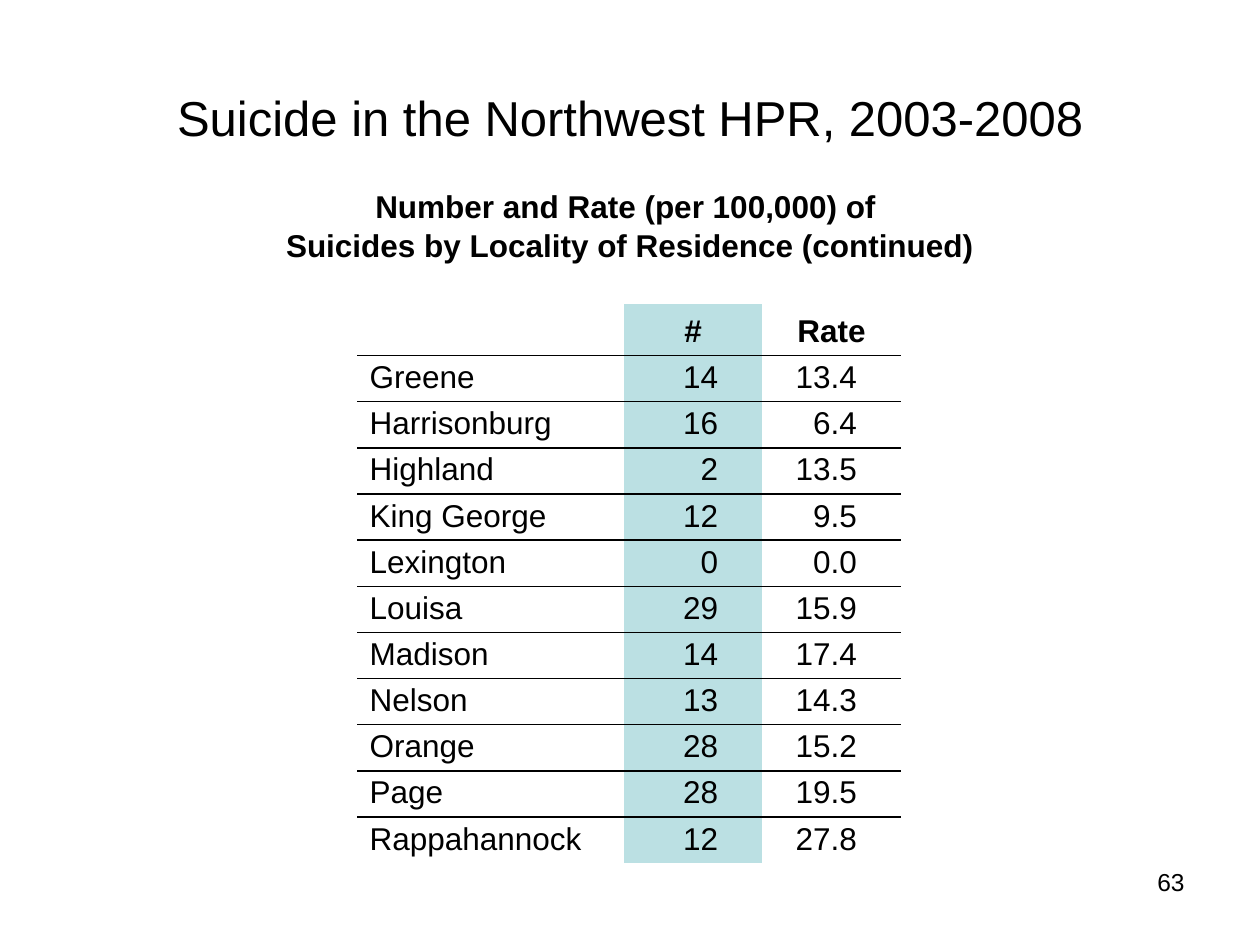
from pptx import Presentation
from pptx import util as u
from pptx.dml.color import RGBColor
from pptx.enum import text as t
from pptx.oxml import parse_xml
from pptx.oxml.ns import nsdecls

BLACK = RGBColor(0x00, 0x00, 0x00)
TEAL = RGBColor(0xBB, 0xE0, 0xE3)
FONT = "Arial"
PLAIN = "{2D5ABB26-0587-4C30-8999-92F81FD0307C}"  # table style without lines
LEFT, MID, RIGHT = t.PP_ALIGN.LEFT, t.PP_ALIGN.CENTER, t.PP_ALIGN.RIGHT

HEAD = ("", "#", "Rate")
RATES = [
    ("Greene", "14", "13.4"),
    ("Harrisonburg", "16", "6.4"),
    ("Highland", "2", "13.5"),
    ("King George", "12", "9.5"),
    ("Lexington", "0", "0.0"),
    ("Louisa", "29", "15.9"),
    ("Madison", "14", "17.4"),
    ("Nelson", "13", "14.3"),
    ("Orange", "28", "15.2"),
    ("Page", "28", "19.5"),
    ("Rappahannock", "12", "27.8"),
]


def write(frame, words, size=18, bold=False, align=LEFT, line=None):
    """Fill a text frame, one paragraph for each line of words."""
    frame.text = words
    for para in frame.paragraphs:
        para.alignment = align
        para.line_spacing = line
        for run in para.runs:
            font = run.font
            font.name, font.size, font.bold = FONT, u.Pt(size), bold
            font.color.rgb = BLACK


class Page:
    """One slide on a grid of 120 columns by 90 rows."""

    def __init__(self, deck):
        self.cell = deck.slide_width // 120
        self.slide = deck.slides.add_slide(deck.slide_layouts[1])

    def span(self, *units):
        return [u.Emu(round(n * self.cell)) for n in units]

    def place(self, shape, box):
        shape.left, shape.top, shape.width, shape.height = self.span(*box)

    def title(self, words, box):
        shape = self.slide.shapes.title
        self.place(shape, box)
        shape.text_frame.vertical_anchor = t.MSO_ANCHOR.MIDDLE
        write(shape.text_frame, words, size=28, align=MID)

    def body(self, words, box):
        shape = self.slide.placeholders[1]
        self.place(shape, box)
        write(shape.text_frame, words, bold=True, align=MID, line=1.05)
        for para in shape.text_frame.paragraphs:
            para.space_before = u.Pt(0)
            props = para._p.get_or_add_pPr()
            props.set("marL", str(u.Inches(0.38)))
            props.set("indent", str(u.Inches(-0.38)))
            props.append(parse_xml(f"<a:buNone {nsdecls('a')}/>"))

    def note(self, words, box, **style):
        frame = self.slide.shapes.add_textbox(*self.span(*box)).text_frame
        frame.word_wrap = True
        write(frame, words, **style)

    def rule(self, cell):
        """Draw a thin line under a table cell."""
        cell._tc.get_or_add_tcPr().insert(0, parse_xml(
            f'<a:lnB {nsdecls("a")} w="{u.Pt(1)}"><a:solidFill>'
            f'<a:srgbClr val="{BLACK}"/></a:solidFill></a:lnB>'))

    def table(self, rows, left, top, wide, high):
        box = self.span(left, top, sum(wide), sum(high))
        frame = self.slide.shapes.add_table(len(rows), len(wide), *box)
        frame._element.xpath(".//a:tableStyleId")[0].text = PLAIN
        grid = frame.table
        grid.first_row = grid.horz_banding = False
        for col, width in zip(grid.columns, self.span(*wide)):
            col.width = width
        for row, height in zip(grid.rows, self.span(*high)):
            row.height = height
        for r, row in enumerate(rows):
            for c, words in enumerate(row):
                cell = grid.cell(r, c)
                cell.vertical_anchor = t.MSO_ANCHOR.BOTTOM
                if c == 1:
                    cell.fill.solid()
                    cell.fill.fore_color.rgb = TEAL
                else:
                    cell.fill.background()
                if r and c:
                    cell.margin_right = u.Inches(0.35)
                align = MID if r == 0 else RIGHT if c else LEFT
                write(cell.text_frame, words, bold=r == 0, align=align,
                      line=0.95 if words else None)
                if r < len(rows) - 1:
                    self.rule(cell)


def main():
    deck = Presentation()
    deck.slide_width, deck.slide_height = u.Inches(10), u.Inches(7.5)
    page = Page(deck)

    # Headings
    page.title("Suicide in the Northwest HPR, 2003-2008", (6, 3.6, 108, 15))
    page.body("Number and Rate (per 100,000) of \n"
              "Suicides by Locality of Residence (continued)",
              (18.5, 17, 83, 9))

    # Counts and rates; rows grow to fit their text
    page.table([HEAD] + RATES, 34, 29, wide=(25.4, 13.2, 13.2),
               high=[4.6] + [3.6] * len(RATES))

    # Page number
    page.note("63", (86, 82, 28, 6.2), size=14, align=RIGHT)
    deck.save("out.pptx")


if __name__ == "__main__":
    main()
